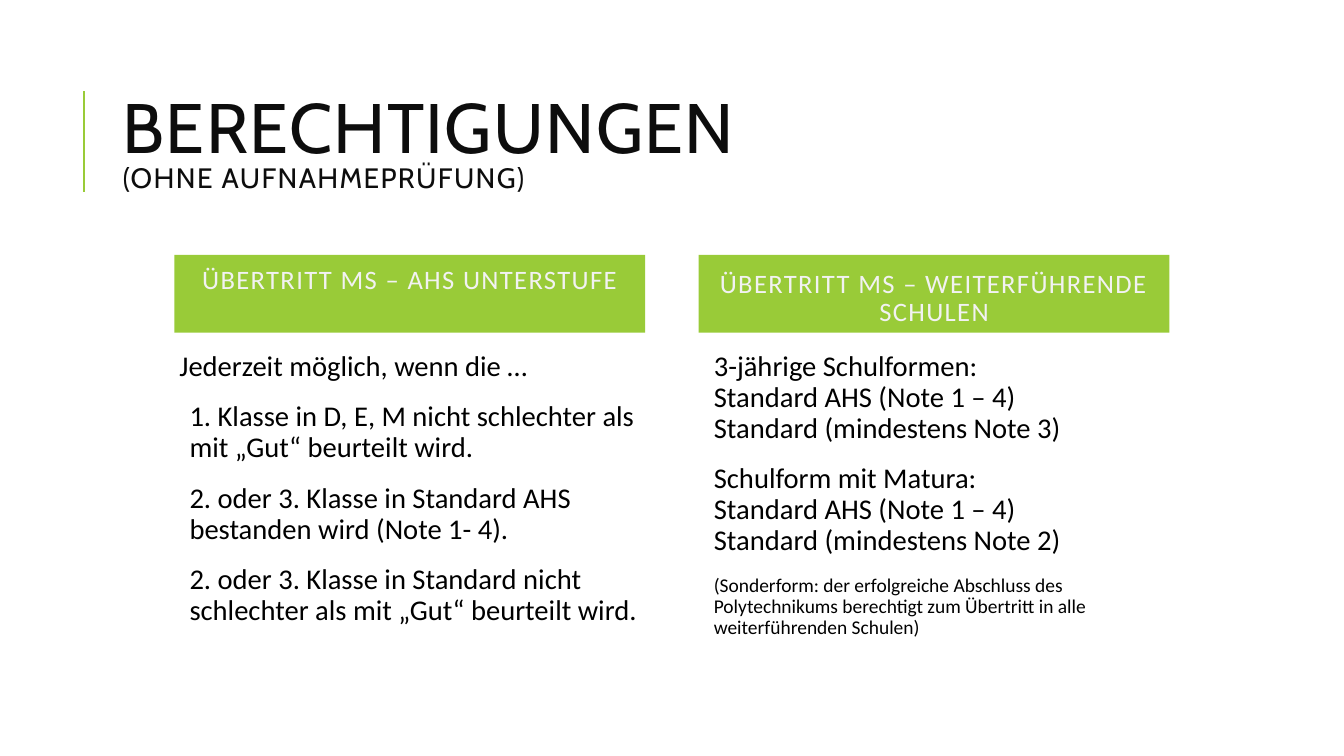
from pptx import Presentation
from pptx.dml.color import RGBColor
from pptx.enum.shapes import MSO_CONNECTOR, MSO_SHAPE
from pptx.enum.text import MSO_ANCHOR, PP_ALIGN
from pptx.oxml.ns import qn
from pptx.util import Inches, Pt
from lxml import etree

LINE = MSO_CONNECTOR.STRAIGHT
RECT = MSO_SHAPE.RECTANGLE
TOP, MID, LOW = MSO_ANCHOR.TOP, MSO_ANCHOR.MIDDLE, MSO_ANCHOR.BOTTOM
LEFT, MIDST = PP_ALIGN.LEFT, PP_ALIGN.CENTER

COLORS = {"green": "99CB38", "ink": "0D0D0D", "black": "000000", "pale": "F2F2F2"}

HEAD = {"size": Pt(19), "name": "Calibri"}
BODY = {"size": Pt(20.4), "name": "Calibri"}
NOTE = {"size": Pt(13.9), "name": "Calibri"}
MAIN = {"size": Pt(50), "name": "Cabin"}
SUB = {"size": Pt(20), "name": "Cabin"}

COLUMNS = [
    ("ÜBERTRITT MS – AHS UNTERSTUFE", 0.37, [
        ("Jederzeit möglich, wenn die …", BODY, 0),
        ("1. Klasse in D, E, M nicht schlechter als mit „Gut“ beurteilt wird.", BODY, 0.1),
        ("2. oder 3. Klasse in Standard AHS bestanden wird (Note 1- 4).", BODY, 0.1),
        ("2. oder 3. Klasse in Standard nicht schlechter als mit „Gut“ beurteilt wird.",
         BODY, 0.1),
    ]),
    ("ÜBERTRITT MS – WEITERFÜHRENDE SCHULEN", 0.05, [
        ("3-jährige Schulformen:\nStandard AHS (Note 1 – 4)\n"
         "Standard (mindestens Note 3)", BODY, 0.1),
        ("Schulform mit Matura:\nStandard AHS (Note 1 – 4)\n"
         "Standard (mindestens Note 2)", BODY, 0.1),
        ("(Sonderform: der erfolgreiche Abschluss des Polytechnikums berechtigt "
         "zum Übertritt in alle weiterführenden Schulen)", NOTE, 0.1),
    ]),
]


def apply(item, form):
    for key, value in form.items():
        setattr(item, key, value)


def style(run, form, color, space=0):
    apply(run.font, form)
    run.font.color.rgb = RGBColor.from_string(COLORS[color])
    if space:
        run.font._element.set("spc", str(space * 100))


def set_frame(frame, anchor, side=0.05, low=0.05):
    apply(frame, {
        "word_wrap": True, "vertical_anchor": anchor,
        "margin_left": Inches(side), "margin_right": Inches(side),
        "margin_top": Inches(0.05), "margin_bottom": Inches(low),
    })


def add_title(slide, left, top, width, height):
    rule = slide.shapes.add_connector(
        LINE, Inches(left), Inches(top + 1.26), Inches(left), Inches(top + 0.26))
    rule.line.color.rgb = RGBColor.from_string(COLORS["green"])
    rule.line.width = Pt(1.5)
    etree.SubElement(rule._element.spPr, qn("a:effectLst"))

    box = slide.shapes.add_textbox(
        Inches(left + 0.29), Inches(top), Inches(width - 0.29), Inches(height))
    set_frame(box.text_frame, MID, side=0.1)
    para = box.text_frame.paragraphs[0]
    para.line_spacing = 0.8
    para.text = "BERECHTIGUNGEN\n(OHNE AUFNAHMEPRÜFUNG)"
    for run, form in zip(para.runs, (MAIN, SUB)):
        style(run, form, "ink", 1)


def add_header(slide, text, low, left, top, width, height):
    bar = slide.shapes.add_shape(
        RECT, Inches(left), Inches(top), Inches(width), Inches(height))
    bar.shadow.inherit = False
    bar.fill.solid()
    bar.fill.fore_color.rgb = RGBColor.from_string(COLORS["green"])
    bar.line.fill.background()
    set_frame(bar.text_frame, LOW, low=low)
    para = bar.text_frame.paragraphs[0]
    apply(para, {"text": text, "alignment": MIDST,
                 "line_spacing": 0.9, "space_after": Pt(2)})
    style(para.runs[0], HEAD, "pale", 1)


def add_body(slide, items, left, top, width, height):
    box = slide.shapes.add_textbox(
        Inches(left), Inches(top), Inches(width), Inches(height))
    frame = box.text_frame
    set_frame(frame, TOP)
    for index, (text, form, indent) in enumerate(items):
        para = frame.add_paragraph() if index else frame.paragraphs[0]
        apply(para, {"text": text, "alignment": LEFT, "line_spacing": 0.9,
                     "space_before": Pt(12 if index else 0), "space_after": Pt(2)})
        para._p.get_or_add_pPr().set("marL", str(Inches(indent)))
        for run in para.runs:
            style(run, form, "black")


def add_column(slide, column, left, top, width, height):
    head, low, items = column
    add_header(slide, head, low, left, top, width, 0.77)
    add_body(slide, items, left, top + 0.91, width, height - 0.91)


def main():
    deck = Presentation()
    deck.slide_width, deck.slide_height = Inches(13.33), Inches(7.5)
    slide = deck.slides.add_slide(deck.slide_layouts[6])
    add_title(slide, 0.83, 0.64, 10.92, 1.64)
    for index, column in enumerate(COLUMNS):
        add_column(slide, column, 1.73 + index * 5.2, 2.53, 4.67, 4.11)
    deck.save("out.pptx")


if __name__ == "__main__":
    main()
